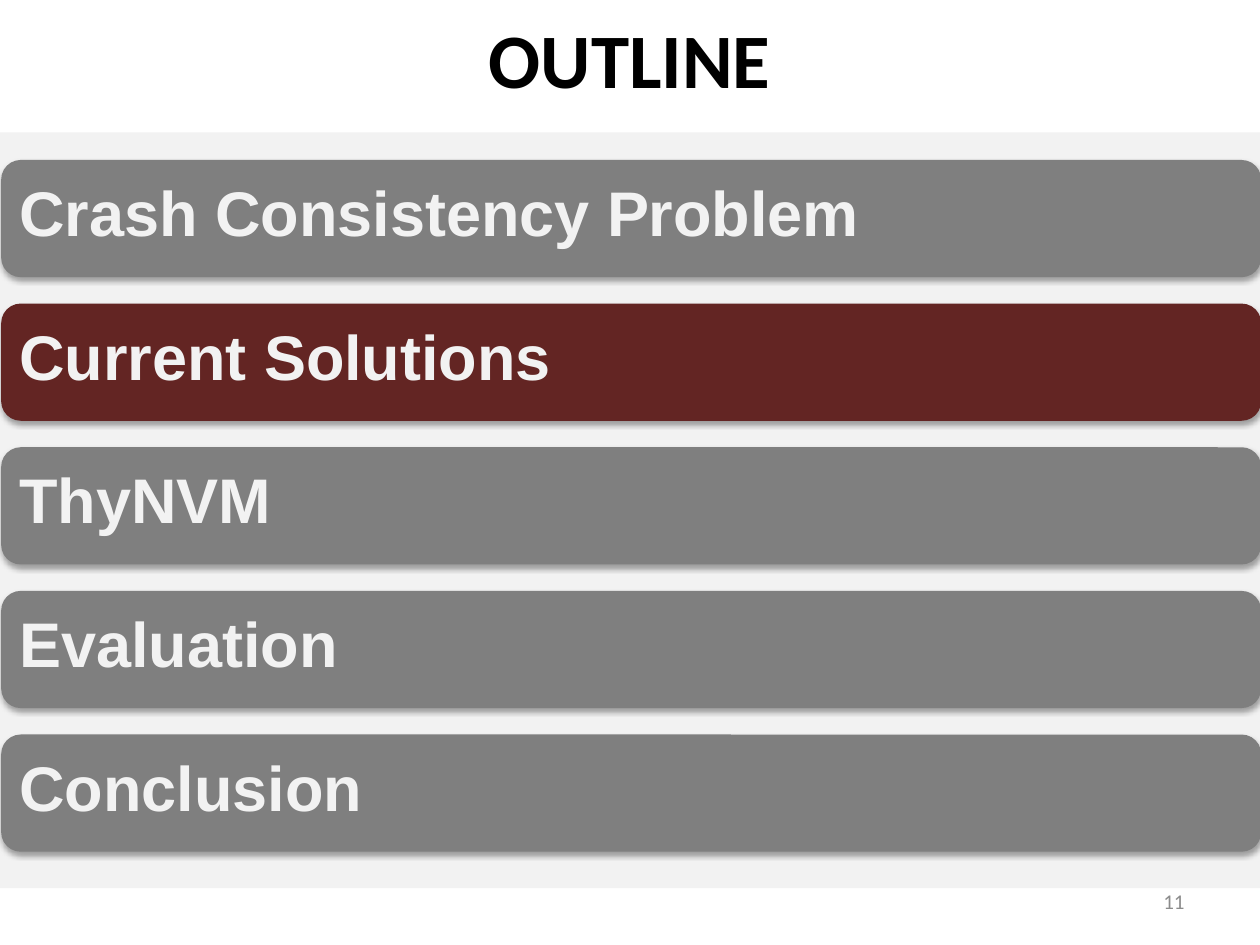
"""Build the outline slide with the current section highlighted."""
from lxml import etree
from pptx import Presentation, util as u
from pptx.dml.color import RGBColor
from pptx.enum import shapes, text
from pptx.oxml.ns import nsdecls

BLACK = RGBColor(0x00, 0x00, 0x00)
PALE = RGBColor(0xF2, 0xF2, 0xF2)
GREY = RGBColor(0x7F, 0x7F, 0x7F)
NUMBER_GREY = RGBColor(0x8C, 0x8C, 0x8C)
MAROON = RGBColor(0x63, 0x25, 0x23)

SECTIONS = ["Crash Consistency Problem", "Current Solutions", "ThyNVM", "Evaluation", "Conclusion"]
CURRENT = "Current Solutions"
BAR_LEFT, FIRST_BAR, BAR_PITCH, BAR_HEIGHT = 0.01, 1.27, 1.14, 0.93
SHADOW = (
    f'<a:effectLst {nsdecls("a")}>'
    '<a:outerShdw blurRad="40000" dist="23000" dir="5400000" rotWithShape="0">'
    '<a:srgbClr val="000000"><a:alpha val="35000"/></a:srgbClr>'
    '</a:outerShdw></a:effectLst>'
)


def write(holder, words, *, size, color, font="Calibri", bold=False,
          align=text.PP_ALIGN.LEFT, spacing=1.0):
    frame = holder.text_frame
    frame.word_wrap = True
    frame.vertical_anchor = text.MSO_ANCHOR.MIDDLE
    line = frame.paragraphs[0]
    line.alignment = align
    line.line_spacing = spacing
    run = line.add_run()
    run.text = words
    run.font.name = font
    run.font.size = u.Pt(size)
    run.font.bold = bold
    run.font.color.rgb = color


def add_block(kind, left, top, width, height, color):
    block = slide.shapes.add_shape(kind, *map(u.Inches, (left, top, width, height)))
    block.shadow.inherit = False
    block.fill.solid()
    block.fill.fore_color.rgb = color
    block.line.fill.background()
    return block


deck = Presentation()
deck.slide_width, deck.slide_height = u.Inches(10), u.Inches(7.5)
slide = deck.slides.add_slide(deck.slide_layouts[6])

add_block(shapes.MSO_SHAPE.RECTANGLE, 0, 1.05, 10, 6, PALE)

title = slide.shapes.add_textbox(0, u.Inches(-0.17), deck.slide_width, u.Inches(1.25))
write(title, "OUTLINE", size=44, color=BLACK, bold=True, align=text.PP_ALIGN.CENTER)

page_number = slide.shapes.add_textbox(u.Inches(7.17), u.Inches(6.95), u.Inches(2.33), u.Inches(0.4))
write(page_number, "11", size=12, color=NUMBER_GREY, align=text.PP_ALIGN.RIGHT)

for row, section in enumerate(SECTIONS):
    bar = add_block(shapes.MSO_SHAPE.ROUNDED_RECTANGLE, BAR_LEFT, FIRST_BAR + row * BAR_PITCH,
                    10, BAR_HEIGHT, MAROON if section == CURRENT else GREY)
    properties = bar.fill._xPr
    properties.remove(properties.find("{*}effectLst"))
    properties.append(etree.fromstring(SHADOW))
    write(bar, section, size=36, color=PALE, font="Arial", bold=True, spacing=0.8)

deck.save("out.pptx")
